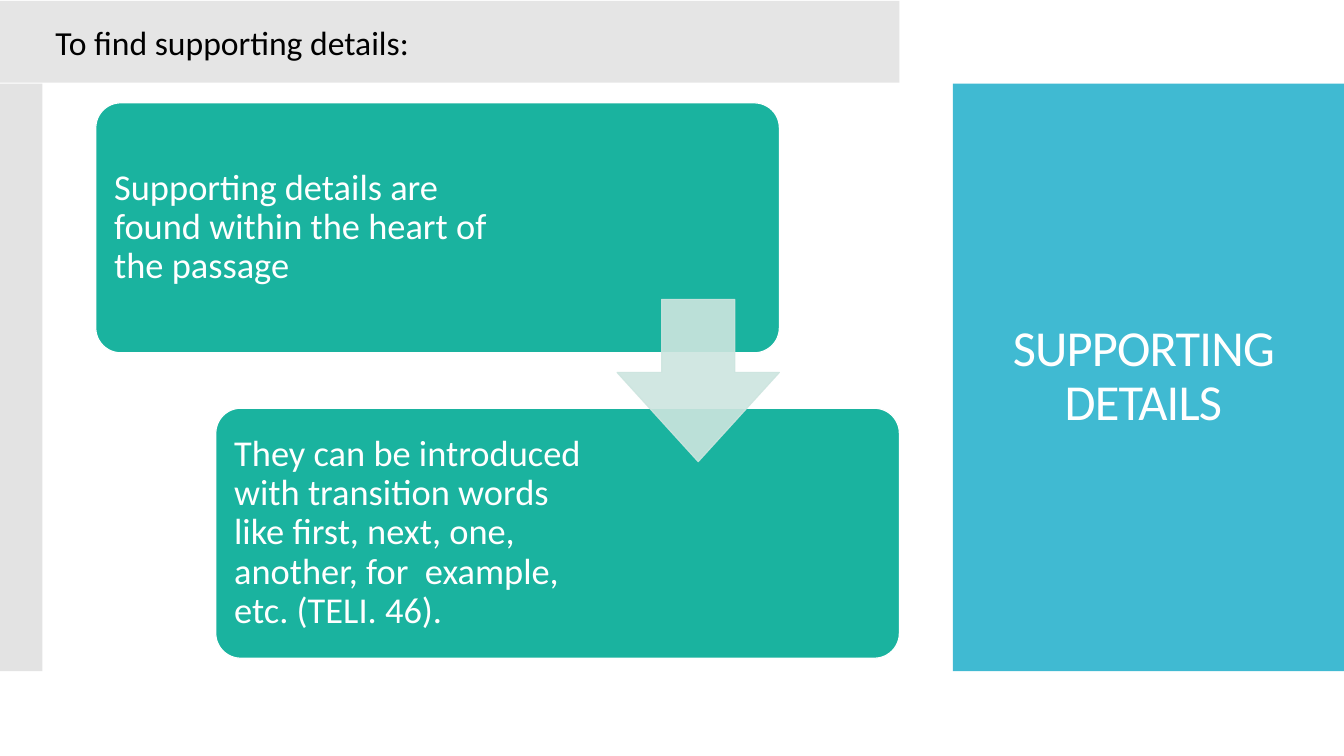
from lxml import etree
from pptx import Presentation
from pptx.dml.color import RGBColor
from pptx.enum import shapes, text
from pptx.oxml.ns import qn
from pptx.util import Inches, Pt

WHITE = RGBColor(0xFF, 0xFF, 0xFF)
BLACK = RGBColor(0x00, 0x00, 0x00)
BLUE = RGBColor(0x40, 0xBA, 0xD2)
TEAL = RGBColor(0x1A, 0xB3, 0x9F)
MINT = RGBColor(0xCD, 0xE5, 0xDF)
GREY = RGBColor(0xC8, 0xC8, 0xC8)
PALE_GREY = RGBColor(0xE5, 0xE5, 0xE5)

TITLE = "SUPPORTING DETAILS"
HEADING = "To find supporting details:"
STEPS = [  # wording, right inset
    ("Supporting details are found within the heart of the passage", 2.52),
    ("They can be introduced with transition words like first, next, one, "
     "another, for  example, etc. (TELI. 46).", 2.91),
]

SLIDE_W, SLIDE_H = 13.33, 7.5
BAND_TOP, BAND_H = 0.83, 5.83
PANEL_LEFT = 9.45
STEP_LEFT, STEP_TOP, STEP_W, STEP_H = 0.95, 1.02, 6.78, 2.48
STEP_DX, STEP_DY = 1.19, 3.03
ARROW = 1.61
OUTLINE = 0.85


def set_opacity(paint, percent):
    """Make a solid fill partly transparent."""
    colour = paint.fore_color._xFill.find(qn("a:srgbClr"))
    etree.SubElement(colour, qn("a:alpha")).set("val", str(percent * 1000))


def add_block(page, kind, left, top, width, height, fill, line=None,
              opacity=100, adjust=()):
    box = page.shapes.add_shape(kind, Inches(left), Inches(top),
                                Inches(width), Inches(height))
    box.shadow.inherit = False
    for index, value in enumerate(adjust):
        box.adjustments[index] = value
    box.fill.solid()
    box.fill.fore_color.rgb = fill
    paints = [box.fill]
    if line is None:
        box.line.fill.background()
    else:
        box.line.width = Pt(OUTLINE)
        box.line.fill.solid()
        box.line.fill.fore_color.rgb = line
        paints.append(box.line.fill)
    if opacity < 100:
        for paint in paints:
            set_opacity(paint, opacity)
    return box


def write(box, wording, size, colour=WHITE, align=text.PP_ALIGN.LEFT,
          insets=(0.1, 0.05, 0.1, 0.05), line_spacing=None, tracking=None):
    """Fill a shape with one paragraph; insets run left, top, right, bottom."""
    frame = box.text_frame
    frame.word_wrap = True
    frame.vertical_anchor = text.MSO_ANCHOR.MIDDLE
    (frame.margin_left, frame.margin_top,
     frame.margin_right, frame.margin_bottom) = map(Inches, insets)
    para = frame.paragraphs[0]
    para.alignment = align
    para.line_spacing = line_spacing
    span = para.add_run()
    span.text = wording
    span.font.name = "Calibri"
    span.font.size = Pt(size)
    span.font.color.rgb = colour
    if tracking is not None:
        span.font._element.set("spc", str(round(tracking * 100)))


def main():
    deck = Presentation()
    deck.slide_width, deck.slide_height = Inches(SLIDE_W), Inches(SLIDE_H)
    page = deck.slides.add_slide(deck.slide_layouts[6])
    kinds = shapes.MSO_SHAPE

    add_block(page, kinds.RECTANGLE, PANEL_LEFT, BAND_TOP,
              SLIDE_W - PANEL_LEFT, BAND_H, BLUE)
    title = page.shapes.add_textbox(Inches(9.73), Inches(1.23),
                                    Inches(3.22), Inches(5.03))
    write(title, TITLE, 36, align=text.PP_ALIGN.CENTER,
          line_spacing=0.9, tracking=-0.6)
    add_block(page, kinds.RECTANGLE, 0, BAND_TOP, 0.42, BAND_H, GREY, opacity=50)

    for index, (wording, right_inset) in enumerate(STEPS):
        step = add_block(page, kinds.ROUNDED_RECTANGLE,
                         STEP_LEFT + index * STEP_DX, STEP_TOP + index * STEP_DY,
                         STEP_W, STEP_H, TEAL, line=WHITE, adjust=[0.1])
        write(step, wording, 26, insets=(0.11, 0.11, right_inset, 0.11),
              line_spacing=0.9)

    add_block(page, kinds.DOWN_ARROW, STEP_LEFT + STEP_W - ARROW, 2.97,
              ARROW, ARROW, MINT, line=MINT, opacity=90, adjust=[0.45, 0.55])

    heading = add_block(page, kinds.RECTANGLE, 0, 0.01, 8.92, 0.81, PALE_GREY)
    write(heading, HEADING, 24, colour=BLACK, insets=(0.55, 0.05, 0.1, 0.05))

    deck.save("out.pptx")


if __name__ == "__main__":
    main()
